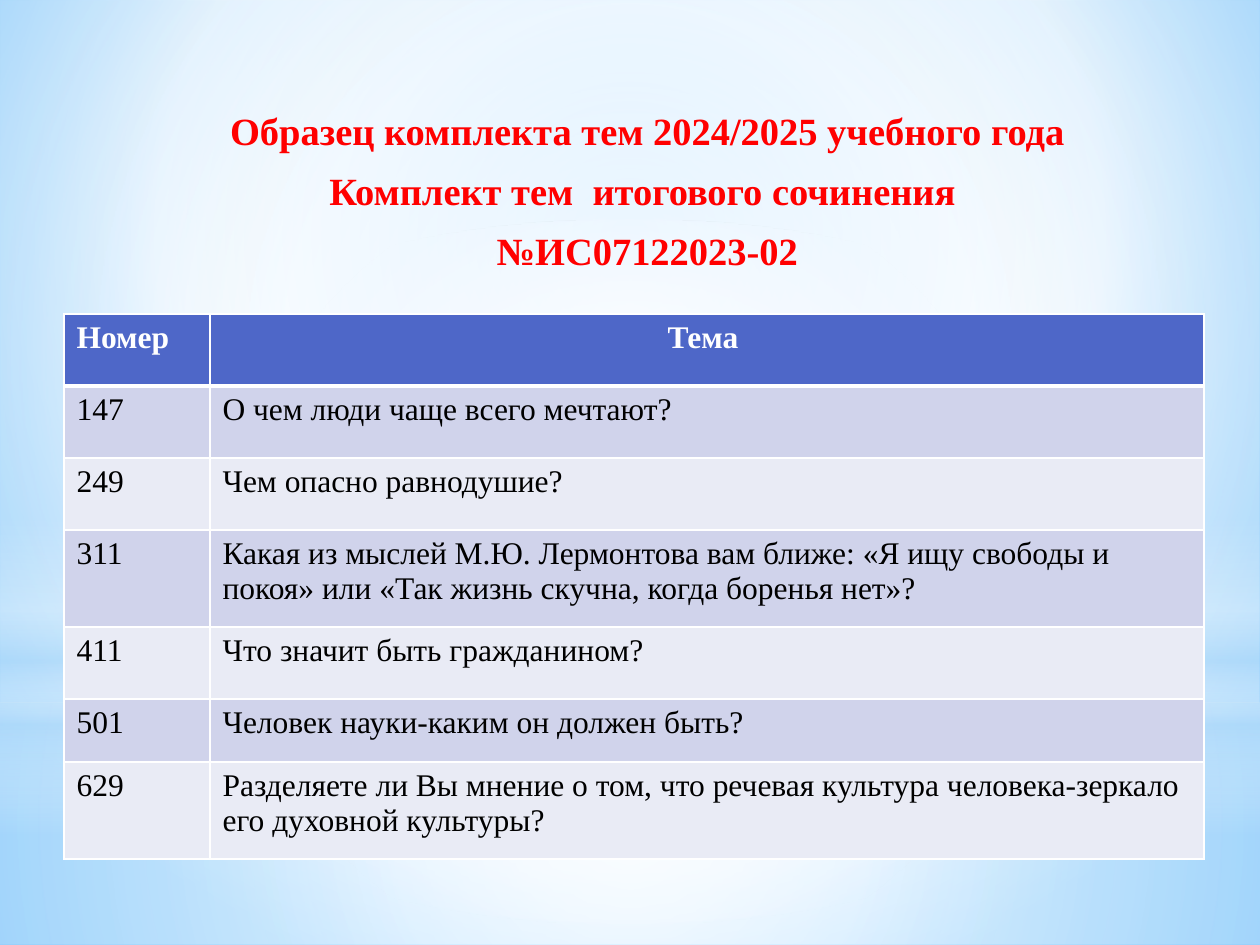
from lxml import etree
from pptx import Presentation
from pptx import util as u
from pptx.dml.color import RGBColor
from pptx.enum import shapes, text
from pptx.oxml.ns import qn

WHITE = RGBColor(0xFF, 0xFF, 0xFF)
BLACK = RGBColor(0x00, 0x00, 0x00)
RED = RGBColor(0xFF, 0x00, 0x00)
HEADER_BLUE = RGBColor(0x4E, 0x67, 0xC8)
BAND_DARK = RGBColor(0xD0, 0xD3, 0xEB)
BAND_LIGHT = RGBColor(0xE9, 0xEB, 0xF5)
SKY = RGBColor(0x9E, 0xD5, 0xFF)
DEEP_SKY = RGBColor(0x5B, 0xB9, 0xFF)
PALE_SKY = RGBColor(0xB4, 0xDC, 0xFA)

CENTRE = (50, 50, 50, 50)
TITLE = [
    "Образец комплекта тем 2024/2025 учебного года",
    "Комплект тем  итогового сочинения ",
    "№ИС07122023-02",
]
TOPICS = [
    ("Номер", "Тема "),
    ("147", "О чем люди чаще всего мечтают?"),
    ("249", "Чем опасно равнодушие?"),
    ("311", "Какая из мыслей М.Ю. Лермонтова вам ближе: «Я ищу свободы и покоя» "
            "или «Так жизнь скучна, когда боренья нет»?"),
    ("411", "Что значит быть гражданином?"),
    ("501", "Человек науки-каким он должен быть?"),
    ("629", "Разделяете ли Вы мнение о том, что речевая культура "
            "человека-зеркало его духовной культуры?"),
]


def px(length):
    return u.Emu(round(length * 914400 / 126))


def add_node(parent, tag, **attributes):
    return etree.SubElement(parent, qn(tag), {k: str(v) for k, v in attributes.items()})


def add_colour(parent, colour, opacity=100):
    node = add_node(parent, "a:srgbClr", val=colour)
    if opacity < 100:
        add_node(node, "a:alpha", val=opacity * 1000)


def set_gradient(holder, stops, focus=None):
    """Swap a solid fill for a gradient: circular around focus, else top to bottom."""
    solid = holder.find(qn("a:solidFill"))
    gradient = etree.Element(qn("a:gradFill"), rotWithShape="1")
    stop_list = add_node(gradient, "a:gsLst")
    for position, *colour in stops:
        add_colour(add_node(stop_list, "a:gs", pos=position * 1000), *colour)
    if focus:
        circle = add_node(gradient, "a:path", path="circle")
        add_node(circle, "a:fillToRect",
                 **{side: share * 1000 for side, share in zip("ltrb", focus)})
    else:
        add_node(gradient, "a:lin", ang=90 * 60000, scaled=0)
    holder.replace(solid, gradient)


def set_borders(cell, colour, **widths):
    """Draw the cell's borders; widths in points are keyed L, R, T, B."""
    properties = cell._tc.get_or_add_tcPr()
    for side, width in widths.items():
        line = add_node(properties, "a:ln" + side, w=u.Pt(width))
        add_colour(add_node(line, "a:solidFill"), colour)


class SlideBuilder:
    font = "Times New Roman"
    title_size = u.Pt(22)
    table_size = u.Pt(18)

    def __init__(self, page):
        self.page = page

    def background(self, stops, focus):
        self.page.background.fill.solid()
        set_gradient(next(self.page.element.iter(qn("p:bgPr"))), stops, focus)

    def glow(self, kind, top, height, stops, focus=None):
        shape = self.page.shapes.add_shape(kind, 0, px(top), px(1260), px(height))
        shape.shadow.inherit = False
        shape.line.fill.background()
        shape.fill.solid()
        set_gradient(shape.element.spPr, stops, focus)

    def set_words(self, para, words, size, colour, bold, centred):
        para.text = words
        para.alignment = text.PP_ALIGN.CENTER if centred else text.PP_ALIGN.LEFT
        para.font.name = self.font
        para.font.size = size
        para.font.bold = bold
        para.font.color.rgb = colour

    def title(self, lines, left, top, width, height):
        box = self.page.shapes.add_textbox(px(left), px(top), px(width), px(height))
        frame = box.text_frame
        frame.word_wrap = True
        frame.margin_left = u.Inches(0.15)
        for index, line in enumerate(lines):
            para = frame.add_paragraph() if index else frame.paragraphs[0]
            self.set_words(para, line, self.title_size, RED, True, True)
            para.space_before = u.Pt(5)
            para.space_after = u.Pt(3)

    def table(self, rows, left, top, widths, heights):
        table = self.page.shapes.add_table(
            len(rows), len(widths), px(left), px(top),
            px(sum(widths)), px(sum(heights))).table
        table.first_row = table.horz_banding = False
        for column, width in zip(table.columns, widths):
            column.width = px(width)
        for r, (row, height) in enumerate(zip(rows, heights)):
            table.rows[r].height = px(height)
            header = r == 0
            band = HEADER_BLUE if header else BAND_DARK if r % 2 else BAND_LIGHT
            for c, words in enumerate(row):
                cell = table.cell(r, c)
                set_borders(cell, WHITE, L=1, R=1,
                            T=3 if r == 1 else 1, B=3 if header else 1)
                cell.fill.solid()
                cell.fill.fore_color.rgb = band
                self.set_words(cell.text_frame.paragraphs[0], words, self.table_size,
                               WHITE if header else BLACK, header, header and c == 1)


def main():
    deck = Presentation()
    deck.slide_width, deck.slide_height = px(1260), px(945)
    slide = SlideBuilder(deck.slides.add_slide(deck.slide_layouts[6]))
    rectangle = shapes.MSO_SHAPE.RECTANGLE

    slide.background([(0, SKY), (60, WHITE), (100, DEEP_SKY)], (20, 10, 20, 60))
    slide.glow(rectangle, 703, 242,
               [(0, WHITE, 91), (37, WHITE, 76), (100, PALE_SKY, 79)], CENTRE)
    slide.glow(rectangle, 0, 703,
               [(0, WHITE, 89), (48, WHITE, 62), (100, PALE_SKY, 79)], CENTRE)
    slide.glow(rectangle, 519, 315,
               [(0, WHITE, 0), (29, WHITE, 30), (45, PALE_SKY, 40),
                (55, WHITE, 26), (65, PALE_SKY, 60), (100, WHITE, 0)])
    slide.glow(shapes.MSO_SHAPE.OVAL, 220, 703,
               [(0, WHITE), (56, WHITE, 0)], CENTRE)

    slide.title(TITLE, 64, 101, 1160, 779)
    slide.table(TOPICS, 64, 314, (146, 994), (72, 72, 72, 97, 72, 63, 97))
    deck.save("out.pptx")


if __name__ == "__main__":
    main()
